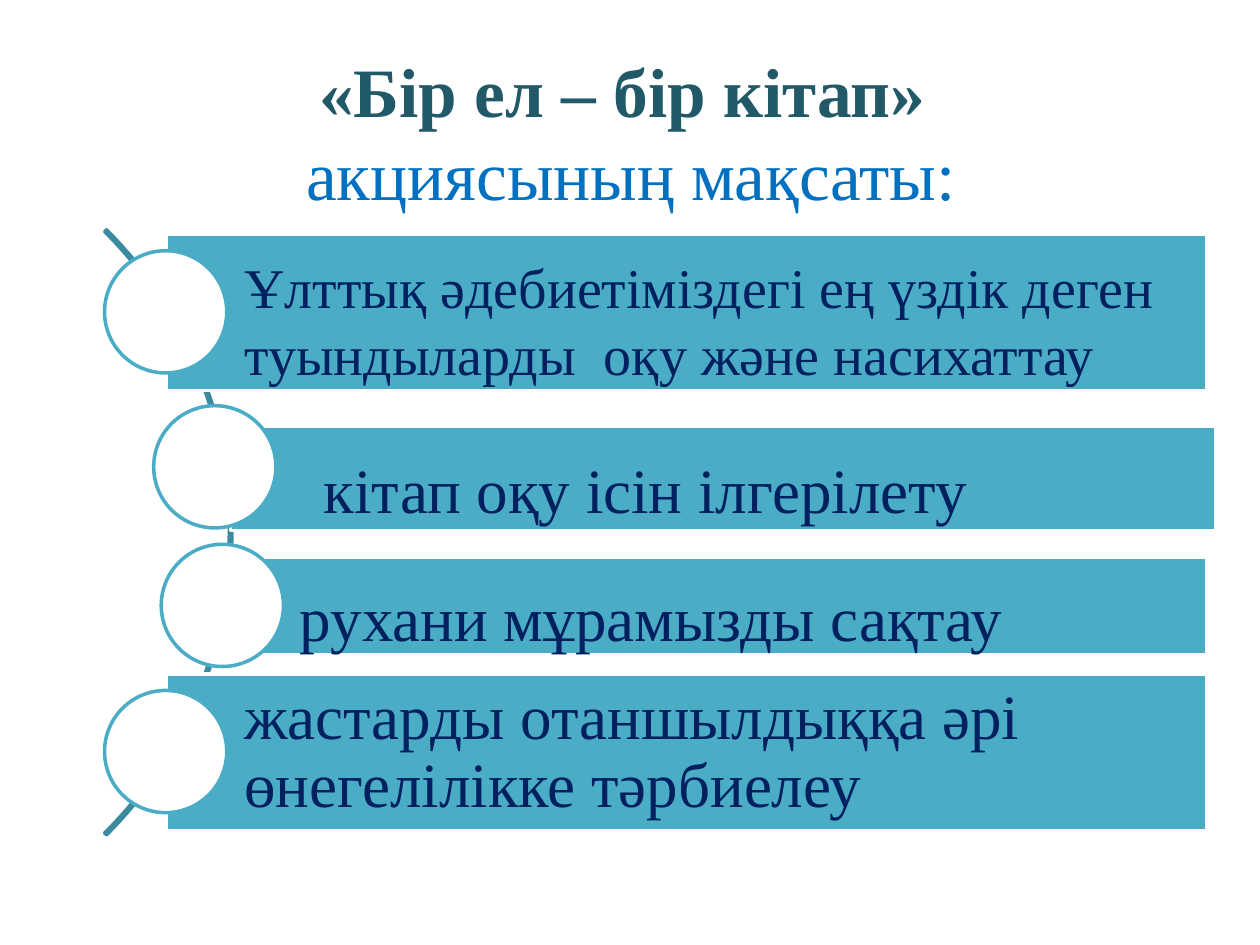
from dataclasses import dataclass

from pptx import Presentation
from pptx.dml.color import RGBColor
from pptx.enum.shapes import MSO_SHAPE as SHAPE
from pptx.enum.text import MSO_ANCHOR as ANCHOR, MSO_AUTO_SIZE as AUTO, PP_ALIGN as ALIGN
from pptx.util import Inches, Pt


@dataclass(frozen=True)
class Theme:
    font: str = "Times New Roman"
    white: str = "FFFFFF"
    teal: str = "4BACC6"
    arc: str = "3C8A9F"
    navy: str = "002060"
    blue: str = "0070C0"
    dark_teal: str = "215968"
    title_size: float = 39.6
    small_size: float = 32
    large_size: float = 36
    line: float = 2


T = Theme()
CIRCLE = 0.97
ARC_BOX = (-4.95, 0.83, 6.79, 6.79)
GOALS = [
    dict(box=(1.32, 1.86, 8.26, 1.24), circle=(0.83, 1.99), size=T.small_size,
         left=0.62, top=0.21, text="Ұлттық әдебиетіміздегі ең үздік деген туындыларды  оқу және насихаттау"),
    dict(box=(1.83, 3.38, 7.82, 0.83), circle=(1.22, 3.22), size=T.large_size,
         left=0.74, top=0.25, text="кітап оқу ісін ілгерілету"),
    dict(box=(1.76, 4.42, 7.82, 0.78), circle=(1.28, 4.32), size=T.large_size,
         left=0.62, top=0.25, text="рухани мұрамызды сақтау"),
    dict(box=(1.32, 5.35, 8.26, 1.24), circle=(0.83, 5.48), size=T.large_size,
         left=0.62, top=0.1, spacing=0.9, text="жастарды отаншылдыққа әрі өнегелілікке тәрбиелеу"),
]


def set_all(obj, **values):
    for name, value in values.items():
        setattr(obj, name, value)


def add_run(p, text, size, color, bold=False):
    r = p.add_run()
    r.text = text
    set_all(r.font, name=T.font, size=Pt(size), bold=bold)
    r.font.color.rgb = RGBColor.from_string(color)


def add_figure(s, kind, box, fill, line):
    sp = s.shapes.add_shape(kind, *map(Inches, box))
    sp.shadow.inherit = False
    if fill:
        sp.fill.solid()
        sp.fill.fore_color.rgb = RGBColor.from_string(fill)
    else:
        sp.fill.background()
    sp.line.color.rgb = RGBColor.from_string(line)
    sp.line.width = Pt(T.line)
    return sp


def add_title(s, box):
    title = s.shapes.title
    left, top, width, height = map(Inches, box)
    set_all(title, left=left, top=top, width=width, height=height)
    tf = title.text_frame
    set_all(tf, word_wrap=True, auto_size=AUTO.NONE, vertical_anchor=ANCHOR.MIDDLE,
            margin_top=Inches(0.15))
    p = tf.paragraphs[0]
    p.alignment = ALIGN.CENTER
    add_run(p, "«Бір ел – бір кітап» ", T.title_size, T.dark_teal, bold=True)
    p.add_line_break()
    add_run(p, "акциясының мақсаты:", T.title_size, T.blue)


def add_arc(s, box):
    arc = add_figure(s, SHAPE.BLOCK_ARC, box, None, T.arc)
    for i, value in enumerate((189, 27, 0.003)):
        arc.adjustments[i] = value


def add_goal(s, box, circle, text, size, left, top, spacing=1.0):
    bar = add_figure(s, SHAPE.RECTANGLE, box, T.teal, T.white)
    tf = bar.text_frame
    set_all(tf, word_wrap=True, vertical_anchor=ANCHOR.MIDDLE, margin_left=Inches(left),
            margin_top=Inches(top), margin_right=Inches(0.09), margin_bottom=Inches(0.09))
    p = tf.paragraphs[0]
    set_all(p, alignment=ALIGN.LEFT, line_spacing=spacing)
    add_run(p, text, size, T.navy)
    add_figure(s, SHAPE.OVAL, (*circle, CIRCLE, CIRCLE), T.white, T.teal)


def main():
    prs = Presentation()
    set_all(prs, slide_width=Inches(10), slide_height=Inches(7.5))
    s = prs.slides.add_slide(prs.slide_layouts[5])
    add_title(s, (0.51, 0.21, 9, 1.57))
    add_arc(s, ARC_BOX)
    for goal in GOALS:
        add_goal(s, **goal)
    prs.save("out.pptx")


if __name__ == "__main__":
    main()
